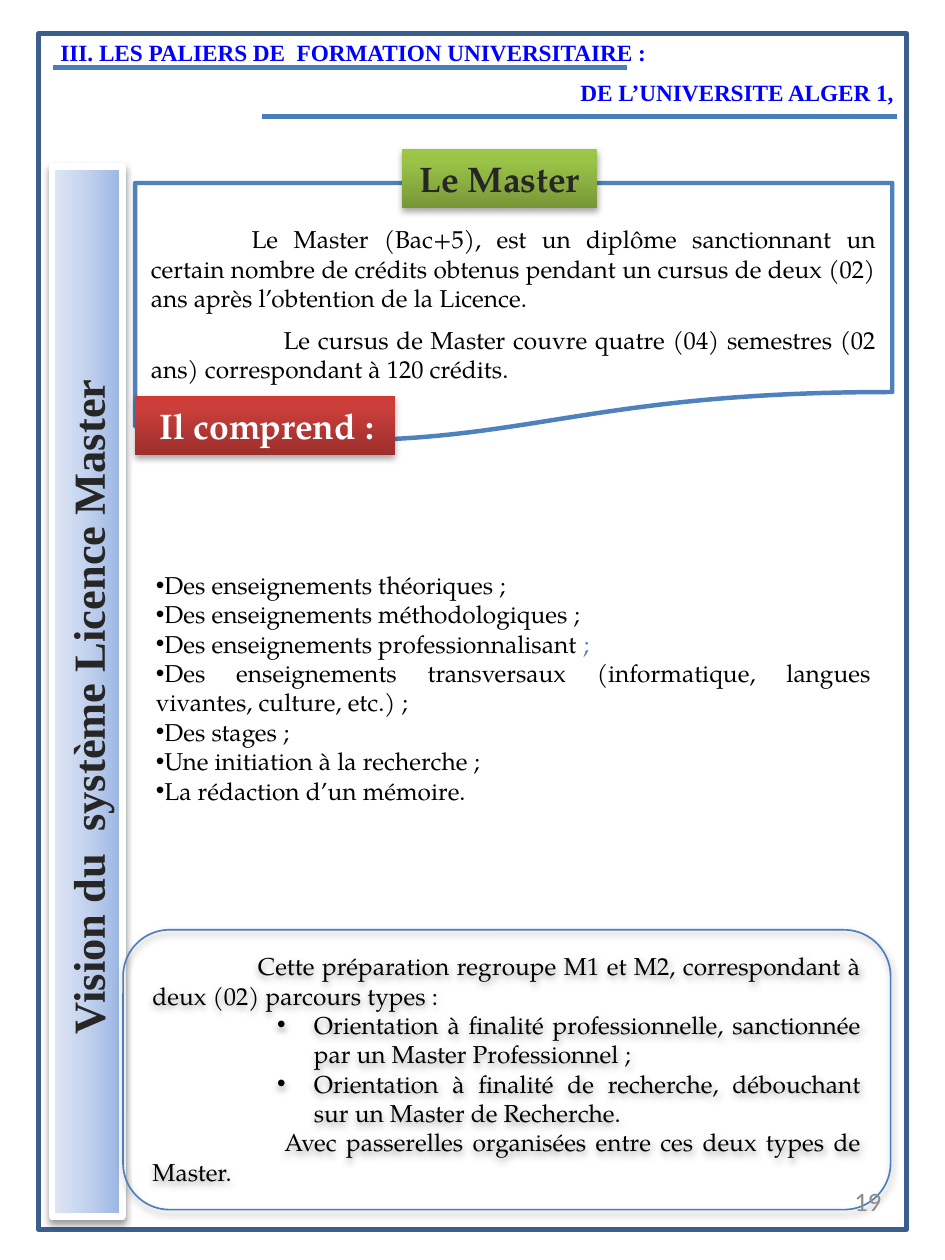
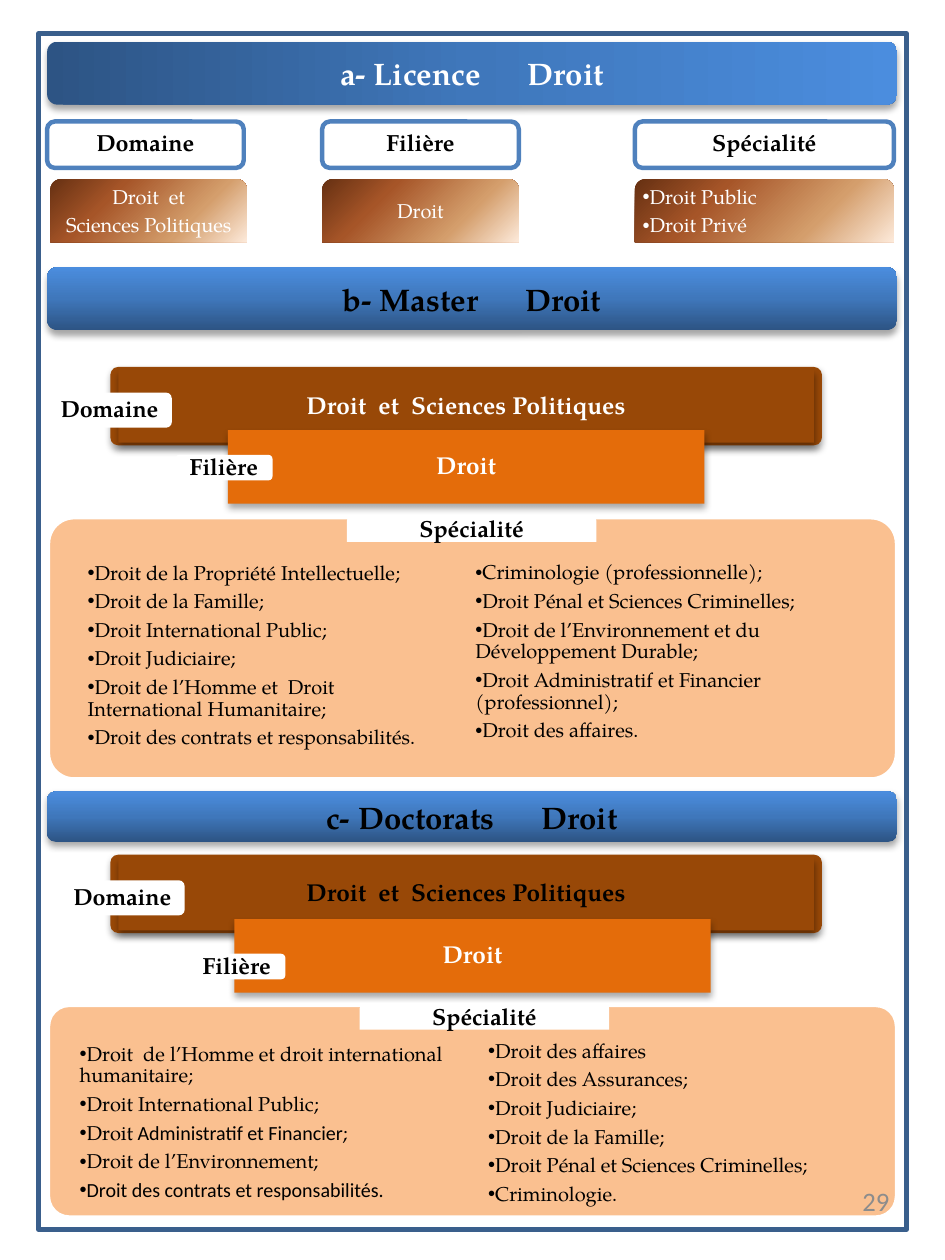
from collections import namedtuple

from lxml.etree import SubElement
from pptx import Presentation
from pptx.dml.color import RGBColor
from pptx.enum.shapes import MSO_CONNECTOR, MSO_SHAPE
from pptx.enum.text import MSO_ANCHOR, PP_ALIGN
from pptx.oxml import parse_xml
from pptx.oxml.ns import nsdecls, qn
from pptx.util import Inches, Pt

# Grid: square cells of a tenth of an inch
COLS, ROWS = 59.1, 78.8

# Colours
WHITE = RGBColor(0xFF, 0xFF, 0xFF)
BLACK = RGBColor(0x00, 0x00, 0x00)
DARK = RGBColor(0x26, 0x26, 0x26)
GREY = RGBColor(0x8C, 0x8C, 0x8C)
NAVY = RGBColor(0x3A, 0x5F, 0x8C)
STEEL = RGBColor(0x4B, 0x7E, 0xBC)
BLUE = RGBColor(0x4F, 0x81, 0xBD)
PURE = RGBColor(0x00, 0x00, 0xFF)
BROWN = RGBColor(0x98, 0x48, 0x07)
ORANGE = RGBColor(0xE4, 0x6C, 0x0A)
PEACH = RGBColor(0xFA, 0xC0, 0x90)

# Gradients: stops by percent; without an angle they spread from a corner
Grad = namedtuple("Grad", "stops angle")
SKY = ((0, "9AB5E4"), (50, "C2D1ED"), (100, "E1E8F5"))
LEAF = ((0, "779737"), (80, "9BC348"), (100, "9DC746"))
BRICK = ((0, "9C2F2D"), (80, "CB3E3A"), (100, "CE3B37"))
SEA = ((0, "2D5484"), (50, "3F77BB"), (100, "4B8DDE"))
COPPER = ((0, "FDEADA"), (30, "D49E6C"), (70, "A65528"), (100, "663012"))

# Shadows: opacity in percent, distance in points
SOFT, HARD = (38, 1.6), (35, 1.8)

# Fonts, shapes and insets
SERIF, TIMES, SANS = "TeX Gyre Pagella", "Times New Roman", "Calibri"
RECT, ROUND = MSO_SHAPE.RECTANGLE, MSO_SHAPE.ROUNDED_RECTANGLE
TAB = MSO_SHAPE.ROUND_2_SAME_RECTANGLE
LEFT, MID, RIGHT, FULL = (
    PP_ALIGN.LEFT, PP_ALIGN.CENTER, PP_ALIGN.RIGHT, PP_ALIGN.JUSTIFY)
TOP, CENTRE = MSO_ANCHOR.TOP, MSO_ANCHOR.MIDDLE
PLAIN, WIDE = (1, 0.5, 1, 0.5), (1.3, 0.6, 1.3, 0.6)
SLIM, SNUG = (0.3,) * 4, (0.6,) * 4


def cells(count):
    return Inches(count / 10)


def blend(shape, grad):
    """Fill a shape with a gradient of several stops."""
    stops = "".join(
        f'<a:gs pos="{pos * 1000}"><a:srgbClr val="{tint}"/></a:gs>'
        for pos, tint in grad.stops)
    if grad.angle is None:
        way = ('<a:path path="circle"><a:fillToRect l="100000" t="100000"'
               ' r="0" b="0"/></a:path>')
    else:
        way = f'<a:lin ang="{grad.angle * 60000}" scaled="0"/>'
    shape.fill.background()
    props = shape._element.spPr
    props.replace(props.find(qn("a:noFill")), parse_xml(
        f'<a:gradFill {nsdecls("a")} rotWithShape="1">'
        f'<a:gsLst>{stops}</a:gsLst>{way}</a:gradFill>'))


def shade(shape, alpha, dist):
    """Cast a shadow straight down."""
    shape._element.spPr.find(qn("a:effectLst")).append(parse_xml(
        f'<a:outerShdw {nsdecls("a")} blurRad="{Pt(3.1)}" dist="{Pt(dist)}"'
        ' dir="5400000" rotWithShape="0"><a:srgbClr val="000000">'
        f'<a:alpha val="{alpha * 1000}"/></a:srgbClr></a:outerShdw>'))


def box(shapes, kind, place, fill=None, line=None, width=2, shadow=None,
        adj=None):
    shape = shapes.add_shape(kind, *map(cells, place))
    shape.shadow.inherit = False
    if isinstance(fill, Grad):
        blend(shape, fill)
    elif fill is None:
        shape.fill.background()
    else:
        shape.fill.solid()
        shape.fill.fore_color.rgb = fill
    if line is None:
        shape.line.fill.background()
    else:
        shape.line.color.rgb = line
        shape.line.width = Pt(width)
    if shadow:
        shade(shape, *shadow)
    if adj is not None:
        shape.adjustments[0] = adj
    return shape


def dent(para, left, first):
    """Set the left margin and the first line's indent."""
    props = para._p.get_or_add_pPr()
    props.set("marL", str(cells(left)))
    props.set("indent", str(cells(first)))


def dot(para):
    """Put a round bullet before a paragraph."""
    props = para._p.get_or_add_pPr()
    for mark in ('buFont {} typeface="Arial"', 'buChar {} char="•"'):
        props.insert_element_before(
            parse_xml(f'<a:{mark.format(nsdecls("a"))}/>'),
            "a:tabLst", "a:defRPr", "a:extLst")


def write(shape, lines, size, color=BLACK, face=SERIF, bold=False, align=MID,
          anchor=CENTRE, inset=PLAIN, tight=False, dots=False, wrap=True):
    """Write paragraphs; a tuple is one paragraph of several runs."""
    frame = shape.text_frame
    frame.word_wrap, frame.vertical_anchor = wrap, anchor
    (frame.margin_left, frame.margin_top,
     frame.margin_right, frame.margin_bottom) = map(cells, inset)
    for i, line in enumerate(lines):
        para = frame.add_paragraph() if i else frame.paragraphs[0]
        for part in (line if isinstance(line, tuple) else (line,)):
            para.add_run().text = part
        para.alignment = align
        if tight:
            para.line_spacing, para.space_after = 0.9, Pt(size * 0.35)
        font = para.font
        font.size, font.name, font.bold = Pt(size), face, bold
        font.color.rgb = color
        if dots:
            dot(para)
    return frame.paragraphs


def text(shapes, place, lines, size, **style):
    return write(shapes.add_textbox(*map(cells, place)), lines, size, **style)


def rule(shapes, left, right, row):
    line = shapes.add_connector(
        MSO_CONNECTOR.STRAIGHT, *map(cells, (left, row, right, row)))
    line.line.color.rgb, line.line.width = STEEL, Pt(2.25)
    SubElement(line._element.spPr, qn("a:effectLst"))


def page(deck, draw, number, left):
    """Frame a new slide, draw its content and number it."""
    shapes = deck.slides.add_slide(deck.slide_layouts[6]).shapes
    box(shapes, RECT, (2.4, 2.1, 54.3, 74.8), line=NAVY)
    draw(shapes)
    text(shapes, (left, 73, 13.8, 4.2), [number], 12, color=GREY, face=SANS,
         align=RIGHT)


# First slide
def master(shapes):
    # Introduction
    intro = box(shapes, MSO_SHAPE.FLOWCHART_DOCUMENT,
                (8.45, 11.45, 47.35, 16.3), WHITE, BLUE)
    first, second = write(intro, [
        "Le Master (Bac+5), est un diplôme sanctionnant un certain nombre de "
        "crédits obtenus pendant un cursus de deux (02) ans après l’obtention "
        "de la Licence.",
        "Le cursus de Master couvre quatre (04) semestres (02 ans) "
        "correspondant à 120 crédits.",
    ], 11, align=FULL, anchor=TOP, inset=(1, 2.6, 1, 0))
    dent(first, 0, 6.3)
    dent(second, 0, 8.3)
    second.space_before = Pt(5.5)

    # Course content
    paras = text(shapes, (8.45, 33.95, 47.35, 17.1), [
        "Des enseignements théoriques ;",
        "Des enseignements méthodologiques ;",
        ("Des enseignements professionnalisant", " ;"),
        "Des enseignements transversaux (informatique, langues vivantes, "
        "culture, etc.) ;",
        "Des stages ;",
        "Une initiation à la recherche ;",
        "La rédaction d’un mémoire.",
    ], 11, align=FULL, inset=(1.3, 1.6, 1.3, 0.6), dots=True)
    paras[2].runs[1].font.color.rgb = BLUE

    # Side band
    band = box(shapes, RECT, (-27.4, 41.05, 65.7, 4.4), Grad(SKY, 270), WHITE,
               3, SOFT)
    band.rotation = 270
    paras = write(band, ["Vision du  système Licence Master"], 20, DARK, TIMES,
                  True, LEFT)
    dent(paras[0], 0, 10.45)

    # Labels
    label = box(shapes, RECT, (25.15, 9.3, 12.2, 3.7), Grad(LEAF, 270),
                shadow=HARD)
    write(label, ["Le Master"], 16, DARK, bold=True, anchor=TOP, wrap=False)
    label = box(shapes, RECT, (8.45, 24.75, 16.25, 3.7), Grad(BRICK, 270),
                shadow=HARD)
    write(label, ["Il comprend :"], 16, WHITE, bold=True, anchor=TOP,
          inset=(1.2, 0.5, 1, 0.5), wrap=False)

    # Two tracks
    tracks = box(shapes, ROUND, (7.7, 58.15, 48, 17.5), None, STEEL, 0.75,
                 SOFT)
    paras = write(tracks, [
        "Cette préparation regroupe M1 et M2, correspondant à deux (02) "
        "parcours types :",
        "Orientation à finalité professionnelle, sanctionnée par un Master "
        "Professionnel ;",
        "Orientation à finalité de recherche, débouchant sur un Master de "
        "Recherche.",
        "Avec passerelles organisées entre ces deux types de Master.",
    ], 11, align=FULL, anchor=TOP)
    dent(paras[0], 0, 6.6)
    for para in paras[1:3]:
        dent(para, 10.1, -2.3)
        dot(para)
    dent(paras[3], 0, 8.25)

    # Heading
    title = {"size": 10.5, "color": PURE, "face": TIMES, "bold": True}
    text(shapes, (28, 4.2, 29.2, 3.1), ["DE L’UNIVERSITE ALGER 1,"],
         align=RIGHT, inset=WIDE, **title)
    text(shapes, (2.8, 1.9, 53.3, 2.9),
         ["III. LES PALIERS DE  FORMATION UNIVERSITAIRE :"],
         align=LEFT, anchor=TOP, **title)
    rule(shapes, 3.3, 39.2, 4.2)
    rule(shapes, 16.4, 56.1, 7.3)


# Second slide
def banner(shapes, row, depth, title, color=BLACK, angle=270):
    bar = box(shapes, ROUND, (2.95, row, 53.15, depth), Grad(SEA, angle),
              shadow=HARD)
    para = write(bar, [(title, " ", "Droit")], 14, color, bold=True)[0]
    para.runs[1].font._element.set("spc", "1750")


def tag(shapes, kind, place, word):
    write(box(shapes, kind, place, WHITE), [word], 10.5, bold=True,
          inset=SNUG, tight=True)


def degree(shapes, row, shift, drop, depth, color):
    """Stack domain, branch and the panel of specialities."""
    style = {"bold": True, "inset": SLIM, "tight": True}
    plate = shapes.add_group_shape().shapes
    box(plate, ROUND, (6.9, row, 44.5, 4.9), BROWN, shadow=HARD, adj=0.1)
    domain = box(plate, RECT, (7.4, row + 0.15, 43.5, 4.6), BROWN, shadow=HARD)
    write(domain, ["Droit  et  Sciences Politiques"], 11, color, **style)
    branch = box(shapes, RECT, (14.25 + shift / 2, row + 3.95 + shift / 10,
                                29.8, 4.6), ORANGE, shadow=HARD)
    write(branch, ["Droit"], 11, WHITE, **style)
    box(shapes, ROUND, (3, row + 9.4, 53.1, depth), PEACH, WHITE, adj=0.1)
    tag(shapes, ROUND, (2.95 + shift, row + 1.6, 7.8, 2.2), "Domaine")
    tag(shapes, ROUND, (10.95 + shift, row + drop, 6.1, 1.6), "Filière")
    tag(shapes, TAB, (21.7 + shift, row + 9.35, 15.6, 1.6), "Spécialité")


def items(shapes, place, lines):
    return text(shapes, place, lines, 9, align=LEFT, anchor=TOP, tight=True,
                dots=True)


def law(shapes):
    # Licence
    banner(shapes, 2.6, 3.95, "a- Licence", WHITE, 0)
    for left, shift, width, head, lines in (
            (2.95, 0.2, 12.3, "Domaine", ["Droit  et", "Sciences Politiques"]),
            (20.15, 0, 12.3, "Filière", ["Droit"]),
            (39.7, 0, 16.2, "Spécialité", ["Droit Public", "Droit Privé"])):
        write(box(shapes, ROUND, (left, 7.6, width, 2.9), WHITE, BLUE), [head],
              10.5, bold=True, anchor=TOP, tight=True)
        dots = head == "Spécialité"
        cell = box(shapes, TAB, (left + shift, 11.2, width, 3.95),
                   Grad(COPPER, None))
        write(cell, lines, 9, WHITE, align=LEFT if dots else MID, inset=SLIM,
              tight=True, dots=dots)

    # Master
    banner(shapes, 16.7, 3.95, "b- Master")
    degree(shapes, 22.95, 0, 5.5, 16.4, WHITE)
    items(shapes, (4.5, 34.7, 23.4, 15.1), [
        "Droit de la Propriété Intellectuelle;",
        "Droit de la Famille;",
        "Droit International Public;",
        "Droit Judiciaire;",
        "Droit de l’Homme et  Droit International Humanitaire;",
        "Droit des contrats et responsabilités."])
    items(shapes, (28.75, 34.7, 27.3, 12.7), [
        "Criminologie (professionnelle);",
        "Droit Pénal et Sciences Criminelles;",
        "Droit de l’Environnement et du Développement Durable;",
        "Droit Administratif et Financier (professionnel);",
        "Droit des affaires."])

    # Doctorate
    banner(shapes, 49.5, 3.15, "c- Doctorats")
    degree(shapes, 53.45, 0.8, 6.2, 13.3, BLACK)
    paras = items(shapes, (4, 64.8, 25.5, 11.3), [
        "Droit  de l’Homme et droit international humanitaire;",
        "Droit International Public;",
        ("Droit", " Administratif et Financier", ";"),
        "Droit de l’Environnement;",
        "Droit des contrats et responsabilités."])
    paras[2].runs[1].font.name = paras[4].font.name = SANS
    items(shapes, (29.55, 64.6, 25, 11.8), [
        "Droit des affaires",
        "Droit des Assurances;",
        "Droit Judiciaire;",
        "Droit de la Famille;",
        "Droit Pénal et Sciences Criminelles;",
        "Criminologie."])


def main():
    deck = Presentation()
    deck.slide_width, deck.slide_height = cells(COLS), cells(ROWS)
    page(deck, master, "19", 42.3)
    page(deck, law, "29", 42.8)
    deck.save("out.pptx")


if __name__ == "__main__":
    main()
